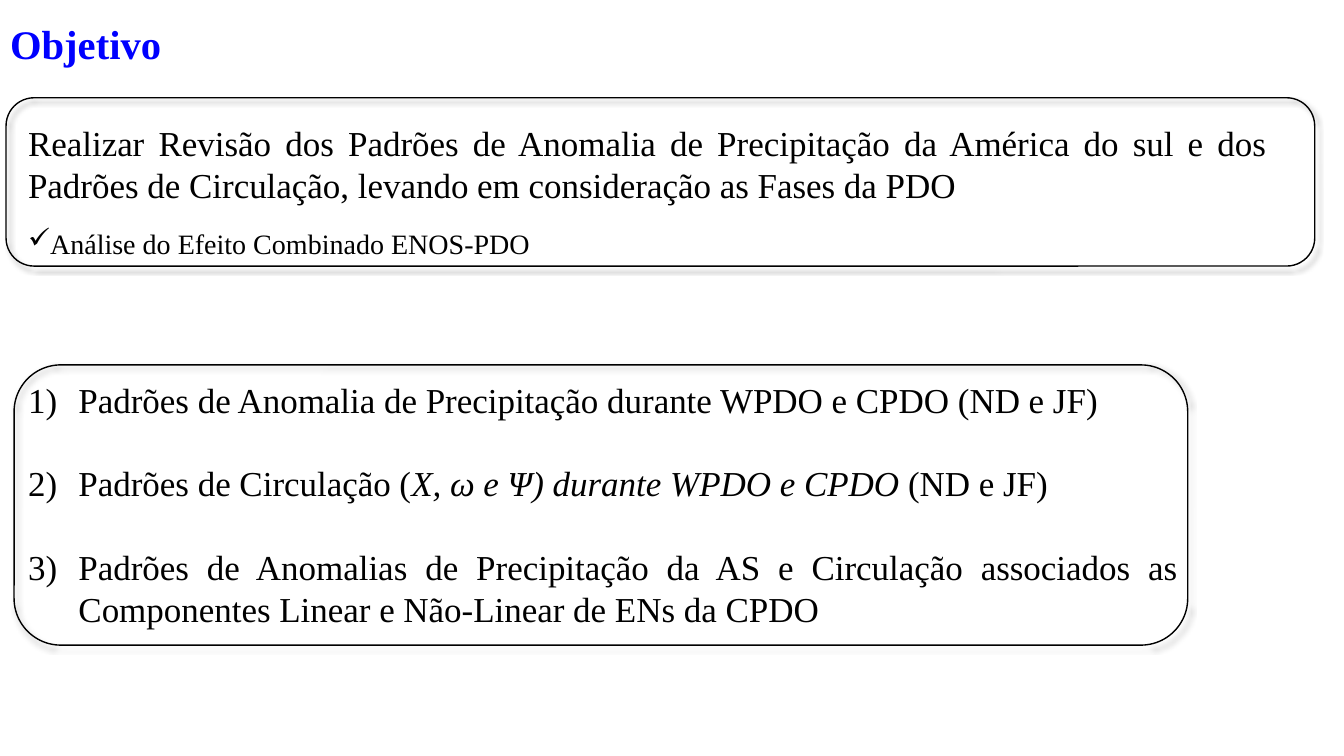
from lxml import etree
from pptx import Presentation
from pptx.dml.color import RGBColor
from pptx.enum.shapes import MSO_SHAPE
from pptx.enum.text import MSO_ANCHOR, MSO_AUTO_SIZE, PP_ALIGN
from pptx.oxml.ns import qn
from pptx.util import Inches, Pt

COLORS = {"text": "000000", "heading": "0000FF", "outline": "000000", "shadow": "000000"}
FONT = "Times New Roman"

HEADING = {"at": (0, 0.08, 3.58, 0.69), "size": 29, "paragraphs": [[("Objetivo", False)]],
           "color": "heading", "bold": True}
BLOCKS = [
    {"at": (0.18, 0.92, 12.48, 1.4), "size": 25, "paragraphs": [
        [("Realizar Revisão dos Padrões de Anomalia de Precipitação da América do sul e dos "
          "Padrões de Circulação, levando em consideração as Fases da PDO", False)]]},
    {"at": (0.18, 2.18, 5.2, 0.46), "size": 20,
     "bullet": ("buChar", {"char": "✓"}), "paragraphs": [
         [("Análise do Efeito Combinado ENOS-PDO", False)]]},
    {"at": (0.18, 3.47, 11.6, 3.06), "size": 25, "indent": 0.5, "gap": 30,
     "bullet": ("buAutoNum", {"type": "arabicParenR"}), "paragraphs": [
         [("Padrões de Anomalia de Precipitação durante WPDO e CPDO (ND e JF)", False)],
         [("Padrões de Circulação (", False), ("Χ, ω e Ψ) durante WPDO e CPDO ", True),
          ("(ND e JF)", False)],
         [("Padrões de Anomalias de Precipitação da AS e Circulação associados as "
           "Componentes Linear e Não-Linear de ENs da CPDO", False)]]},
]
FRAMES = [(0.06, 0.97, 12.98, 1.67), (0.14, 3.62, 11.64, 2.78)]
SHADOW = {"blurRad": Pt(4), "dist": Pt(3), "dir": 45 * 60000, "algn": "tl", "rotWithShape": 0}
SHADOW_ALPHA = 40


def add_element(parent, tag, attributes):
    return etree.SubElement(parent, qn(f"a:{tag}"),
                            {key: str(value) for key, value in attributes.items()})


def fill_text(holder, block):
    frame = holder.text_frame
    frame.word_wrap = True
    frame.auto_size = MSO_AUTO_SIZE.NONE
    frame.vertical_anchor = MSO_ANCHOR.MIDDLE
    for index, runs in enumerate(block["paragraphs"]):
        paragraph = frame.paragraphs[0] if index == 0 else frame.add_paragraph()
        paragraph.alignment = PP_ALIGN.JUSTIFY
        paragraph.space_before = Pt(block.get("gap", 0) if index else 0)
        properties = paragraph._p.get_or_add_pPr()
        indent = Inches(block.get("indent", 0))
        properties.set("marL", str(indent))
        properties.set("indent", str(-indent))
        if "bullet" in block:
            add_element(properties, *block["bullet"])
        for text, italic in runs:
            run = paragraph.add_run()
            run.text = text
            formats = {"name": FONT, "size": Pt(block["size"]),
                       "bold": block.get("bold", False), "italic": italic}
            for attribute, value in formats.items():
                setattr(run.font, attribute, value)
            run.font.color.rgb = RGBColor.from_string(COLORS[block.get("color", "text")])


def add_frame(slide, at):
    outline = slide.shapes.add_shape(MSO_SHAPE.ROUNDED_RECTANGLE, *map(Inches, at))
    outline.fill.background()
    outline.line.color.rgb = RGBColor.from_string(COLORS["outline"])
    outline.line.width = Pt(1)
    outline.shadow.inherit = False
    effects = outline._element.spPr.find(qn("a:effectLst"))
    shade = add_element(effects, "outerShdw", SHADOW)
    tone = add_element(shade, "srgbClr", {"val": COLORS["shadow"]})
    add_element(tone, "alpha", {"val": SHADOW_ALPHA * 1000})


def main():
    deck = Presentation()
    deck.slide_width, deck.slide_height = Inches(13.33), Inches(7.5)
    slide = deck.slides.add_slide(deck.slide_layouts[5])
    heading = slide.shapes.title
    for side, length in zip(("left", "top", "width", "height"), HEADING["at"]):
        setattr(heading, side, Inches(length))
    fill_text(heading, HEADING)
    for block in BLOCKS:
        fill_text(slide.shapes.add_textbox(*map(Inches, block["at"])), block)
    for at in FRAMES:
        add_frame(slide, at)
    deck.save("out.pptx")


if __name__ == "__main__":
    main()
